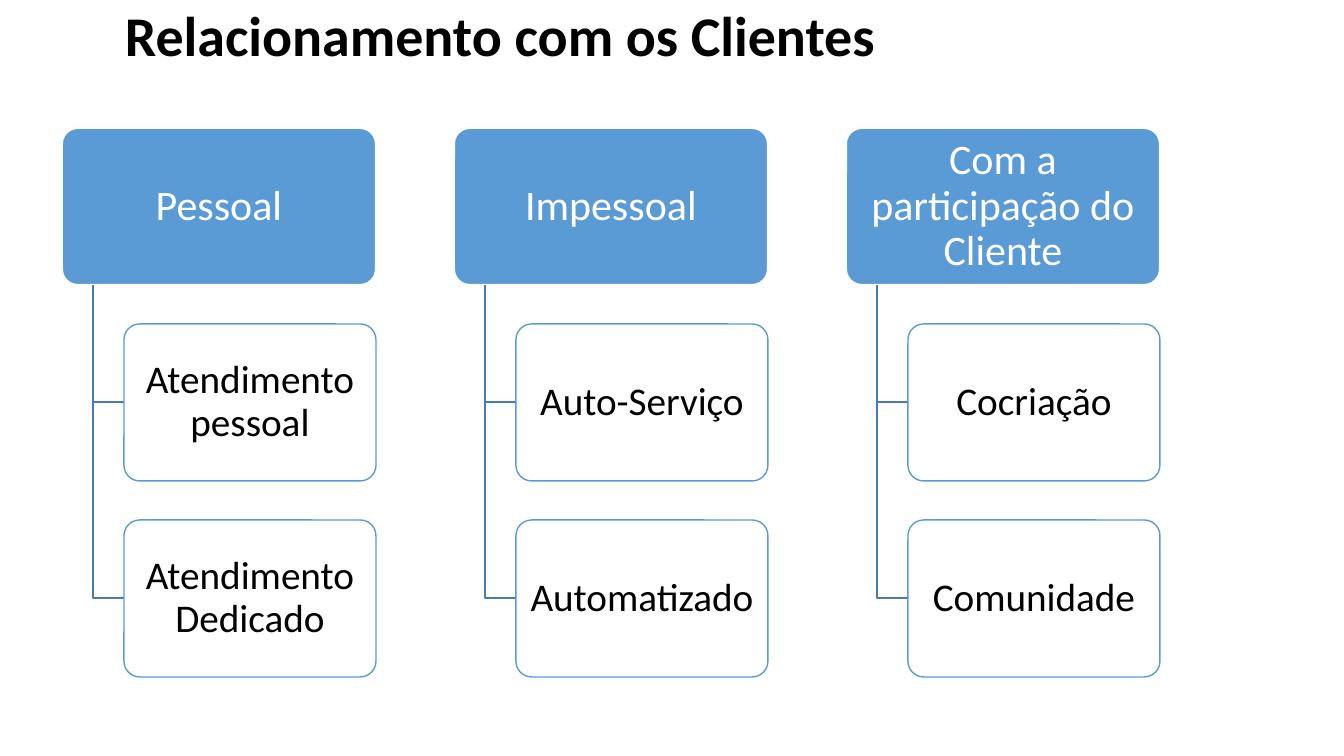
"""Builds the slide on customer relationships: three headed branches of two boxes each."""
from pptx import Presentation
from pptx.dml.color import RGBColor
from pptx.enum.shapes import MSO_SHAPE as Shape
from pptx.enum.text import MSO_ANCHOR as Anchor, PP_ALIGN as Align
from pptx.util import Pt

TITLE = "Relacionamento com os Clientes"
BRANCHES = [
    ("Pessoal", ["Atendimento pessoal", "Atendimento Dedicado"]),
    ("Impessoal", ["Auto-Serviço", "Automatizado"]),
    ("Com a participação do Cliente", ["Cocriação", "Comunidade"]),
]
COLORS = {"blue": "5B9BD5", "stem": "497CAB", "white": "FFFFFF", "black": "000000"}
FONT = "Calibri"

PX = 914400 / 100.8
LEFT, TOP = 62, 128
STEP_X, STEP_Y = 392, 196
HEAD_W, BOX_W, BOX_H = 314, 252, 157
STEM, INDENT = 31, 62


def px(n):
    return round(n * PX)


def color(name):
    return RGBColor.from_string(COLORS[name])


def write(shape, text, size, ink, bold=False, pad=(10, 5)):
    frame = shape.text_frame
    frame.word_wrap = True
    frame.vertical_anchor = Anchor.MIDDLE
    frame.margin_left = frame.margin_right = px(pad[0])
    frame.margin_top = frame.margin_bottom = px(pad[1])
    para = frame.paragraphs[0]
    para.text = text
    para.alignment = Align.CENTER
    para.line_spacing = 0.9
    font = para.font
    font.name, font.size, font.bold = FONT, Pt(size), bold
    font.color.rgb = color(ink)


def add_box(shapes, x, y, w, text, size, fill, line, width, ink):
    box = shapes.add_shape(Shape.ROUNDED_RECTANGLE, px(x), px(y), px(w), px(BOX_H))
    box.adjustments[0] = 0.1
    box.shadow.inherit = False
    box.fill.solid()
    box.fill.fore_color.rgb = color(fill)
    box.line.color.rgb = color(line)
    box.line.width = Pt(width)
    write(box, text, size, ink, pad=(6, 4))


def add_stem(shapes, x, y, end_x, end_y):
    path = shapes.build_freeform(x, y, scale=PX)
    path.add_line_segments([(x, end_y), (end_x, end_y)], close=False)
    stem = path.convert_to_shape()
    stem.shadow.inherit = False
    stem.fill.background()
    stem.line.color.rgb = color("stem")
    stem.line.width = Pt(1)


def main():
    deck = Presentation()
    deck.slide_width, deck.slide_height = px(1344), px(756)
    shapes = deck.slides.add_slide(deck.slide_layouts[6]).shapes

    title = shapes.add_textbox(px(21), 0, px(958), px(76))
    write(title, TITLE, 40, "black", bold=True)

    for col, (head, kids) in enumerate(BRANCHES):
        x = LEFT + col * STEP_X
        add_box(shapes, x, TOP, HEAD_W, head, 30, "blue", "white", 1.5, "white")
        for row, kid in enumerate(kids, 1):
            y = TOP + row * STEP_Y
            add_stem(shapes, x + STEM, TOP + BOX_H, x + INDENT, y + BOX_H // 2)
            add_box(shapes, x + INDENT, y, BOX_W, kid, 28, "white", "blue", 1, "black")

    deck.save("out.pptx")


if __name__ == "__main__":
    main()
